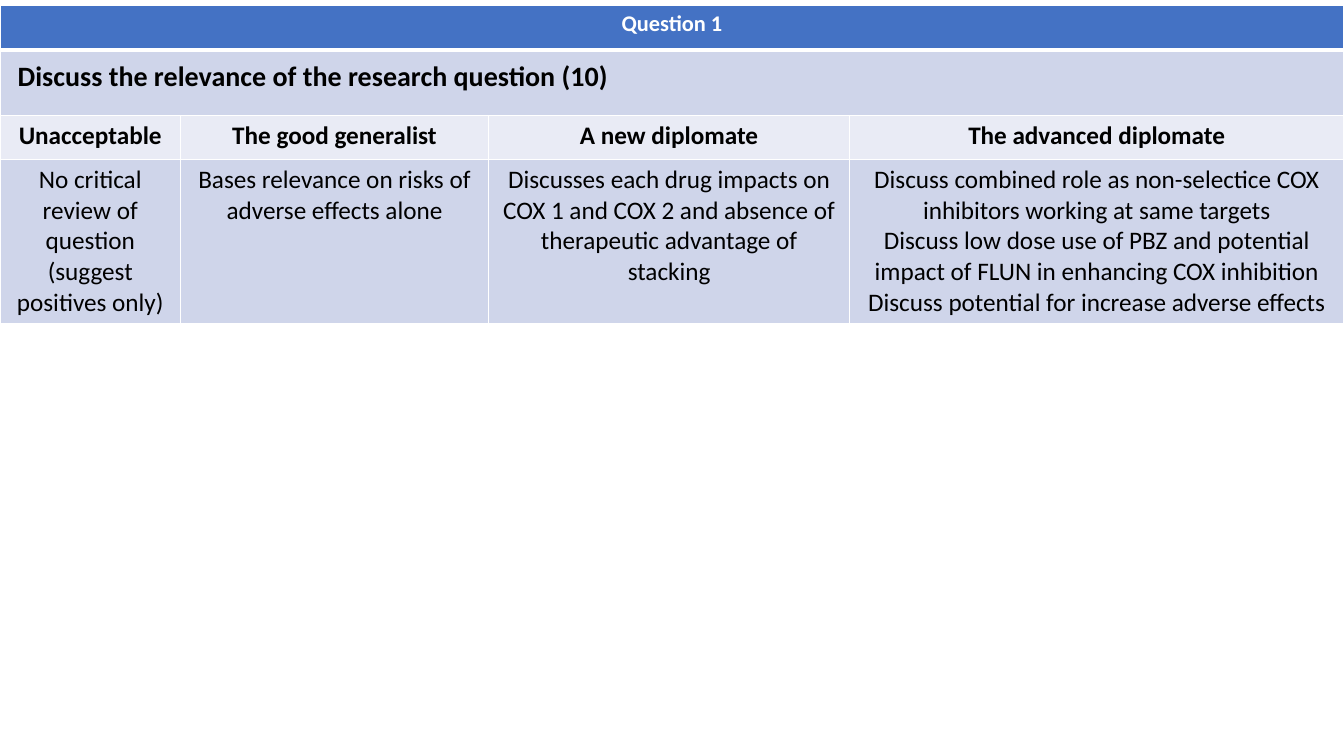
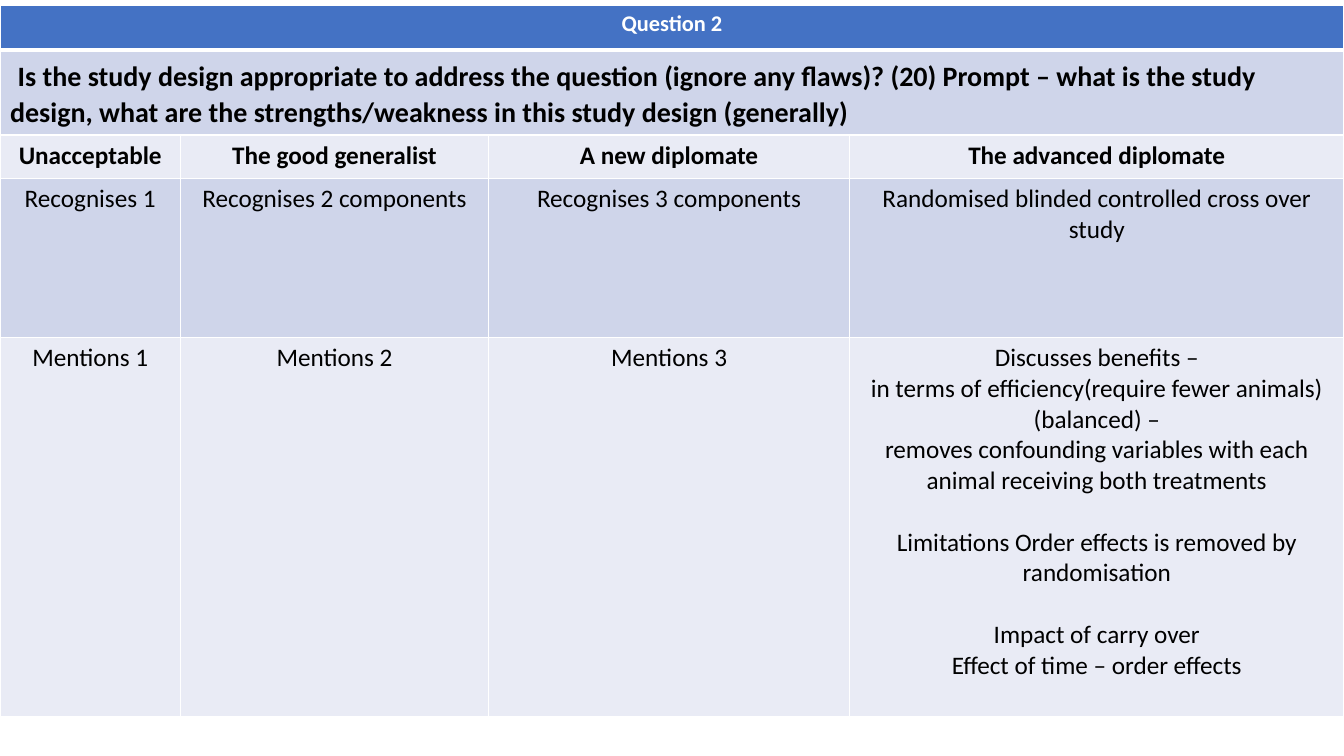
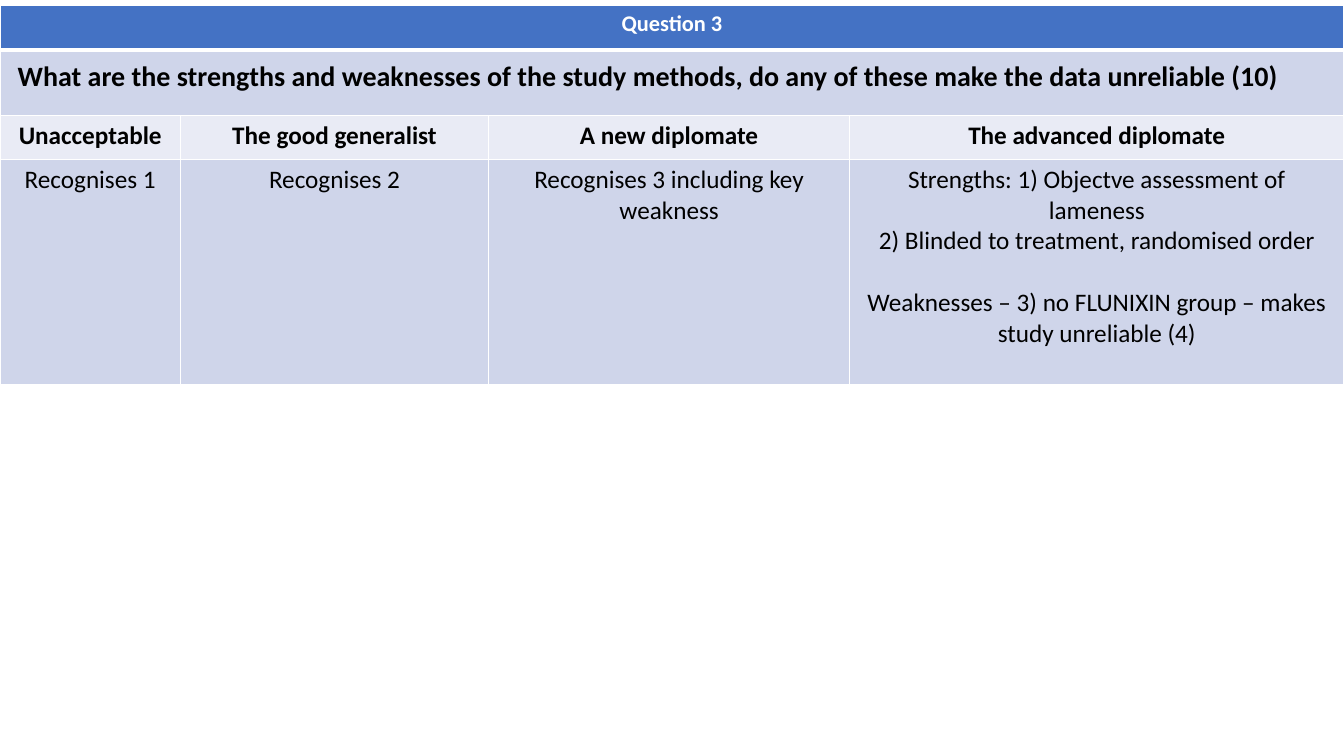
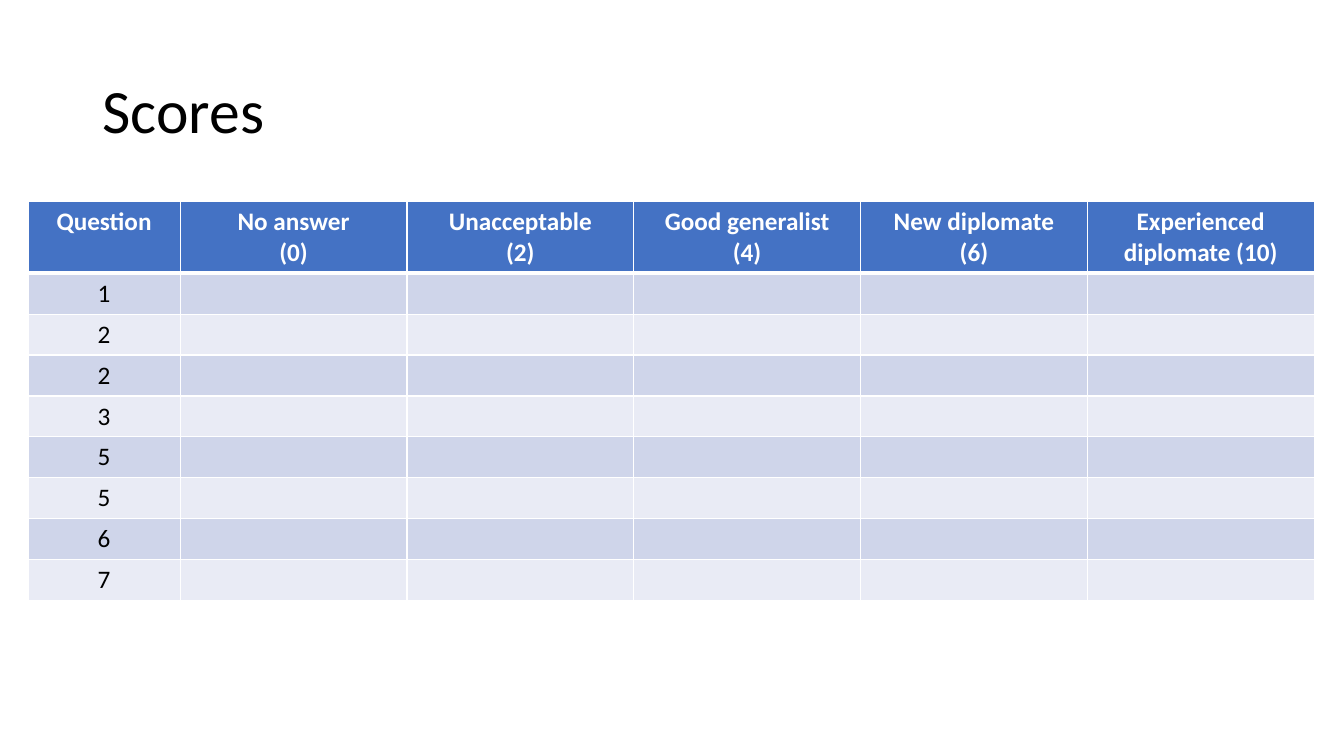
from lxml.etree import SubElement
from pptx import Presentation
from pptx.dml.color import RGBColor
from pptx.enum.text import MSO_ANCHOR, PP_ALIGN
from pptx.oxml.ns import qn
from pptx.util import Pt

COLORS = {"header": "4472C4", "dark_band": "CFD5EA", "light_band": "E9EBF5",
          "white": "FFFFFF", "black": "000000"}
FONT = "Calibri"
TITLE_ONLY, BLANK = 5, 6
BODY_SIZE = 18
GAP = 22  # space before a paragraph that opens a new group

LEVELS = ["Unacceptable", "The good generalist", "A new diplomate", "The advanced diplomate"]
RUBRIC_WIDTHS = [129, 220, 258, 353]
HEADER_HEIGHT, LEVEL_HEIGHT = 31.5, 31

# Within a cell, "\n" starts a paragraph and "\n\n" a new group.
RUBRICS = [
    {
        "title": "Question 1",
        "question": "Discuss the relevance of the research question (10)",
        "question_height": 47.3,
        "answers": [[
            "No critical review of question (suggest positives only)",
            "Bases relevance on risks of adverse effects alone",
            "Discusses each drug impacts on COX 1 and COX 2 and absence of therapeutic "
            "advantage of stacking",
            "Discuss combined role as non-selectice COX inhibitors working at same targets\n"
            "Discuss low dose use of PBZ and potential impact of FLUN in enhancing COX inhibition\n"
            "Discuss potential for increase adverse effects",
        ]],
        "answer_heights": [117],
    },
    {
        "title": "Question 2",
        "question": "Is the study design appropriate to address the question (ignore any flaws)? (20) "
                    "Prompt – what is the study design, what are the strengths/weakness in this "
                    "study design (generally)",
        "question_height": 60.8,
        "answers": [
            ["Recognises 1", "Recognises 2 components", "Recognises 3 components",
             "Randomised blinded controlled cross over study"],
            ["Mentions 1", "Mentions 2", "Mentions 3",
             "Discusses benefits –\n"
             "in terms of efficiency(require fewer animals) (balanced) –\n"
             "removes confounding variables with each animal receiving both treatments\n\n"
             "Limitations Order effects is removed by randomisation\n\n"
             "Impact of carry over\n"
             "Effect of time – order effects"],
        ],
        "answer_heights": [113.6, 271],
    },
    {
        "title": "Question 3",
        "question": "What are the strengths and weaknesses of the study methods, do any of these "
                    "make the data unreliable (10)",
        "question_height": 47.3,
        "answers": [[
            "Recognises 1", "Recognises 2", "Recognises 3 including key weakness",
            "Strengths: 1) Objectve assessment of lameness\n"
            "2) Blinded to treatment, randomised order\n\n"
            "Weaknesses – 3) no FLUNIXIN group – makes study unreliable (4)",
        ]],
        "answer_heights": [161],
    },
]

SCORE_TITLE = "Scores"
SCORE_HEADERS = ["Question", "No answer\n(0)", "Unacceptable\n(2)", "Good generalist\n(4)",
                 "New diplomate\n(6)", "Experienced diplomate (10)"]
SCORE_QUESTIONS = ["1", "2", "2", "3", "5", "5", "6", "7"]
SCORE_WIDTHS = [108.7] + [162] * 5
SCORE_HEADER_HEIGHT, SCORE_ROW_HEIGHT = 51, 29.25


def rgb(name):
    return RGBColor.from_string(COLORS[name])


def add_run(p, text, size, color="black", bold=False):
    r = p.add_run()
    r.text = text
    r.font.name, r.font.size, r.font.bold = FONT, Pt(size), bold
    r.font.color.rgb = rgb(color)


def write_cell(cell, text, size=BODY_SIZE, color="black", bold=False):
    tf = cell.text_frame
    for g, group in enumerate(text.split("\n\n")):
        for i, line in enumerate(group.split("\n")):
            p = tf.add_paragraph() if g or i else tf.paragraphs[0]
            p.alignment = PP_ALIGN.CENTER
            if g and i == 0:
                p.space_before = Pt(GAP)
            add_run(p, line, size, color, bold)


def style_cell(cell, row):
    """Draw white borders, heavier under the header, and the banded fill."""
    tcPr = cell._tc.get_or_add_tcPr()
    widths = {"lnL": 1, "lnR": 1, "lnT": 3 if row == 1 else 1, "lnB": 3 if row == 0 else 1}
    for side, width in widths.items():
        ln = SubElement(tcPr, qn(f"a:{side}"), w=str(Pt(width)))
        SubElement(SubElement(ln, qn("a:solidFill")), qn("a:srgbClr"), val=COLORS["white"])
    band = "dark_band" if row % 2 else "light_band"
    cell.fill.solid()
    cell.fill.fore_color.rgb = rgb(band if row else "header")


def add_grid(slide, left, top, widths, heights):
    """Add an empty styled table and return it."""
    table = slide.shapes.add_table(len(heights), len(widths), Pt(left), Pt(top),
                                   Pt(sum(widths)), Pt(sum(heights))).table
    for column, width in zip(table.columns, widths):
        column.width = Pt(width)
    for r, (row, height) in enumerate(zip(table.rows, heights)):
        row.height = Pt(height)
        for cell in row.cells:
            style_cell(cell, r)
    return table


def add_rubric(prs, rubric):
    slide = prs.slides.add_slide(prs.slide_layouts[BLANK])
    heights = [HEADER_HEIGHT, rubric["question_height"], LEVEL_HEIGHT, *rubric["answer_heights"]]
    table = add_grid(slide, 0, 4, RUBRIC_WIDTHS, heights)
    for r in (0, 1):
        table.cell(r, 0).merge(table.cell(r, len(LEVELS) - 1))
    write_cell(table.cell(0, 0), rubric["title"], 16, "white", True)
    p = table.cell(1, 0).text_frame.paragraphs[0]
    add_run(p, " ", 24, bold=True)
    add_run(p, rubric["question"], 20, bold=True)
    for r, texts in enumerate([LEVELS, *rubric["answers"]], start=2):
        for c, text in enumerate(texts):
            write_cell(table.cell(r, c), text, bold=r == 2)


def add_scores(prs):
    slide = prs.slides.add_slide(prs.slide_layouts[TITLE_ONLY])
    title = slide.shapes.title
    title.left, title.top, title.width, title.height = Pt(66), Pt(28.75), Pt(828), Pt(104.4)
    tf = title.text_frame
    tf.vertical_anchor = MSO_ANCHOR.MIDDLE
    p = tf.paragraphs[0]
    p.alignment, p.line_spacing = PP_ALIGN.LEFT, 0.9
    add_run(p, SCORE_TITLE, 44)

    heights = [SCORE_HEADER_HEIGHT] + [SCORE_ROW_HEIGHT] * len(SCORE_QUESTIONS)
    table = add_grid(slide, 20, 144, SCORE_WIDTHS, heights)
    for c, text in enumerate(SCORE_HEADERS):
        write_cell(table.cell(0, c), text, color="white", bold=True)
    for r, text in enumerate(SCORE_QUESTIONS, start=1):
        write_cell(table.cell(r, 0), text)


def main():
    prs = Presentation()
    prs.slide_width, prs.slide_height = Pt(960), Pt(540)
    for rubric in RUBRICS:
        add_rubric(prs, rubric)
    add_scores(prs)
    prs.save("out.pptx")


if __name__ == "__main__":
    main()
